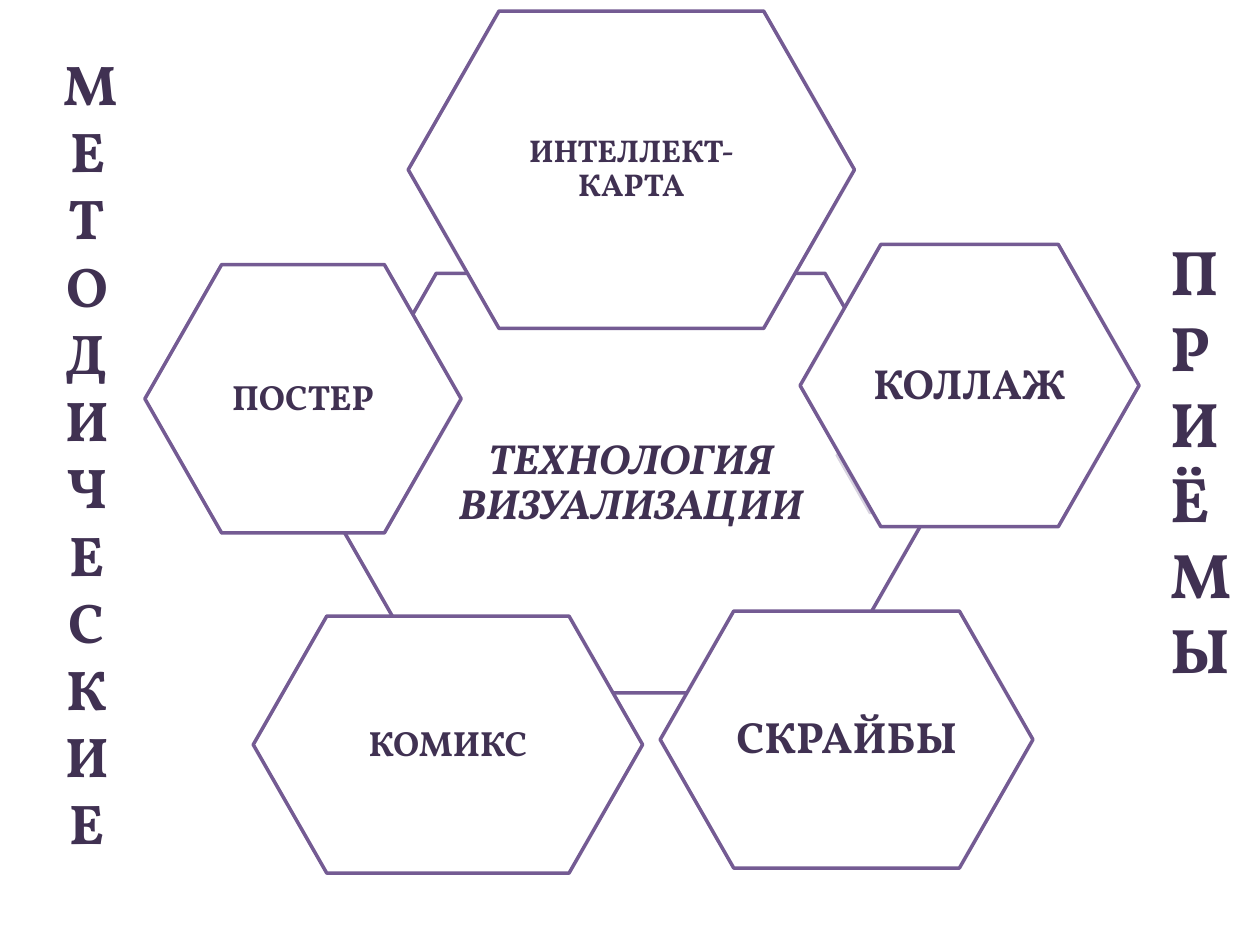
from dataclasses import dataclass

from pptx import Presentation
from pptx import util as u
from pptx.dml.color import RGBColor
from pptx.enum import shapes, text


@dataclass(frozen=True)
class Theme:
    font: str = "Vollkorn"
    ink: str = "403152"
    outline: str = "745B93"
    paper: str = "FFFFFF"
    shade: str = "D8D3E0"
    small: int = 18
    medium: int = 20
    large: int = 24
    largest: int = 25
    left_heading: int = 32
    right_heading: int = 36


class Board:
    def __init__(self, page, theme):
        self.page = page
        self.theme = theme

    def label(self, box, wording, size, align, inset, italic=False):
        frame = box.text_frame
        frame.text = wording
        frame.word_wrap = True
        frame.margin_left = frame.margin_right = u.Pt(inset[0])
        frame.margin_top = frame.margin_bottom = u.Pt(inset[1])
        para = frame.paragraphs[0]
        para.alignment = align
        for span in para.runs:
            span.font.name = self.theme.font
            span.font.size = u.Pt(size)
            span.font.bold = True
            span.font.italic = italic
            span.font.color.rgb = RGBColor.from_string(self.theme.ink)
        return frame

    def hexagon(self, place, fill, outlined=True):
        shape = self.page.shapes.add_shape(
            shapes.MSO_SHAPE.HEXAGON, *map(u.Pt, place))
        shape.shadow.inherit = False
        shape.adjustments[0] = 0.286
        shape.fill.solid()
        shape.fill.fore_color.rgb = RGBColor.from_string(fill)
        if outlined:
            shape.line.color.rgb = RGBColor.from_string(self.theme.outline)
            shape.line.width = u.Pt(2)
        else:
            shape.line.fill.background()
        return shape

    def topic(self, wording, place, size, italic=False):
        shape = self.hexagon(place, self.theme.paper)
        frame = self.label(shape, wording, size, text.PP_ALIGN.CENTER, (2.4, 2.4), italic)
        frame.vertical_anchor = text.MSO_ANCHOR.MIDDLE
        frame.paragraphs[0].line_spacing = 0.9

    def letter_column(self, wording, place, size, align):
        """Box so narrow that the word wraps after every letter."""
        box = self.page.shapes.add_textbox(*map(u.Pt, place))
        self.label(box, wording, size, align, (7.2, 3.6))


def main():
    deck = Presentation()
    deck.slide_width, deck.slide_height = u.Pt(720), u.Pt(540)
    theme = Theme()
    board = Board(deck.slides.add_slide(deck.slide_layouts[6]), theme)

    board.topic("ТЕХНОЛОГИЯ ВИЗУАЛИЗАЦИИ", (180.7, 156.2, 359.3, 239.8),
                theme.large, italic=True)
    board.hexagon((477.4, 226.8, 77.8, 67), theme.shade, outlined=False)

    topics = [
        ("ИНТЕЛЛЕКТ-КАРТА", (233.3, 6.3, 255, 181.4), theme.small),
        ("КОЛЛАЖ", (457.2, 139.7, 193.7, 161.3), theme.large),
        ("СКРАЙБЫ", (377.3, 349.2, 213, 146.9), theme.largest),
        ("КОМИКС", (144.7, 352.1, 222.5, 146.9), theme.medium),
        ("ПОСТЕР", (82.8, 151.2, 180.7, 153.4), theme.medium),
    ]
    for wording, place, size in topics:
        board.topic(wording, place, size)

    board.letter_column("МЕТОДИЧЕСКИЕ", (29.2, 24.8, 41, 479.5),
                        theme.left_heading, text.PP_ALIGN.CENTER)
    board.letter_column("ПРИЁМЫ", (661.7, 129.6, 49.7, 269.3),
                        theme.right_heading, text.PP_ALIGN.LEFT)
    deck.save("out.pptx")


if __name__ == "__main__":
    main()
